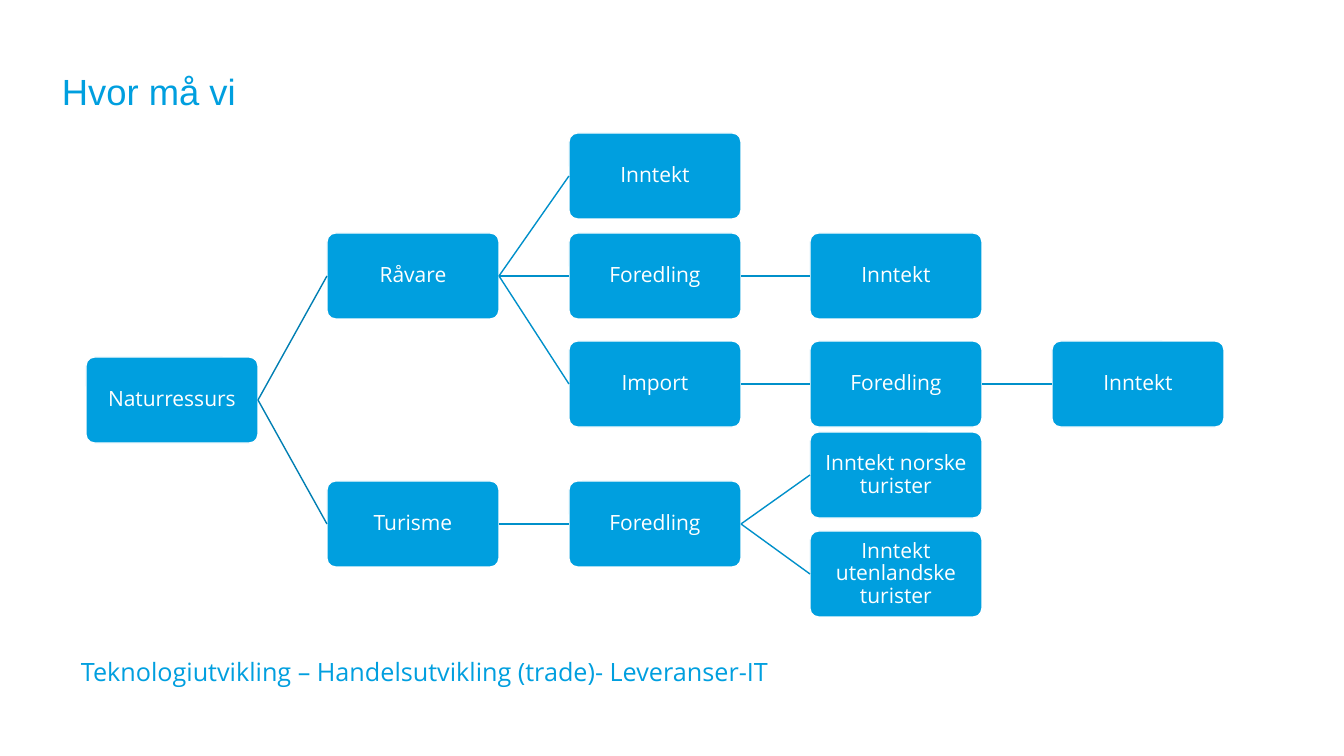
from lxml.etree import SubElement
from pptx import Presentation
from pptx.dml.color import RGBColor
from pptx.enum.shapes import MSO_CONNECTOR, MSO_SHAPE
from pptx.enum.text import MSO_ANCHOR, PP_ALIGN
from pptx.oxml.ns import qn
from pptx.util import Pt

SCALE = 914400 / 100.8
BLUE, WHITE = "009FDF", "FFFFFF"
WIDTH, HEIGHT = 172, 86

TREE = ("Naturressurs", 400, [
    ("Råvare", 276, [
        ("Inntekt", 176, []),
        ("Foredling", 276, [("Inntekt", 276, [])]),
        ("Import", 384, [("Foredling", 384, [("Inntekt", 384, [])])]),
    ]),
    ("Turisme", 524, [
        ("Foredling", 524, [
            ("Inntekt norske turister", 475, []),
            ("Inntekt utenlandske turister", 574, []),
        ]),
    ]),
])


def px(count):
    """Turn pixels into EMU."""
    return round(count * SCALE)


def color(code):
    """Turn a hex string into a colour."""
    return RGBColor.from_string(code)


def write(frame, text, size, face, code, space):
    """Fill a text frame with one styled paragraph and return it."""
    frame.word_wrap = True
    line = frame.paragraphs[0]
    line.text = text
    line.line_spacing = space
    line.font.size = Pt(size)
    line.font.name = face
    line.font.color.rgb = color(code)
    return line


def label(slide, text, area, size, face, space):
    """Add a blue text box."""
    box = slide.shapes.add_textbox(*map(px, area))
    write(box.text_frame, text, size, face, BLUE, space)


def node(slide, text, level, middle):
    """Add a rounded box in the column of its level."""
    left = 86 + 483 * level // 2
    area = left, middle - HEIGHT // 2, WIDTH, HEIGHT
    box = slide.shapes.add_shape(MSO_SHAPE.ROUNDED_RECTANGLE, *map(px, area))
    box.adjustments[0] = 0.1
    box.shadow.inherit = False
    box.fill.solid()
    box.fill.fore_color.rgb = color(BLUE)
    box.line.color.rgb = color(WHITE)
    box.line.width = Pt(1)
    frame = box.text_frame
    frame.margin_left = frame.margin_right = px(4)
    frame.margin_top = frame.margin_bottom = px(4)
    frame.vertical_anchor = MSO_ANCHOR.MIDDLE
    line = write(frame, text, 15, "Open Sans", WHITE, 0.9)
    line.alignment = PP_ALIGN.CENTER
    return box


def link(slide, start, end, code):
    """Join the right side of one box to the left side of another."""
    wire = slide.shapes.add_connector(MSO_CONNECTOR.STRAIGHT, 0, 0, 0, 0)
    wire.begin_connect(start, 3)
    wire.end_connect(end, 1)
    wire.line.color.rgb = color(code)
    wire.line.width = Pt(1)
    SubElement(wire._element.spPr, qn("a:effectLst"))


def branch(slide, tree, level=0):
    """Draw a box with all that grows from it and return the box."""
    text, middle, kids = tree
    box = node(slide, text, level, middle)
    for kid in kids:
        end = branch(slide, kid, level + 1)
        link(slide, box, end, "0090CA" if level else "007FB3")
    return box


def main():
    """Build the slide and save it."""
    deck = Presentation()
    deck.slide_width, deck.slide_height = px(1344), px(756)
    slide = deck.slides.add_slide(deck.slide_layouts[6])
    label(slide, "Hvor må vi", (52, 73, 748, 47), 26, "Arial", 0.8)
    branch(slide, TREE)
    label(slide, "Teknologiutvikling – Handelsutvikling (trade)- Leveranser-IT",
          (71, 651, 1211, 40), 18, "Open Sans", 1.0)
    deck.save("out.pptx")


if __name__ == "__main__":
    main()
